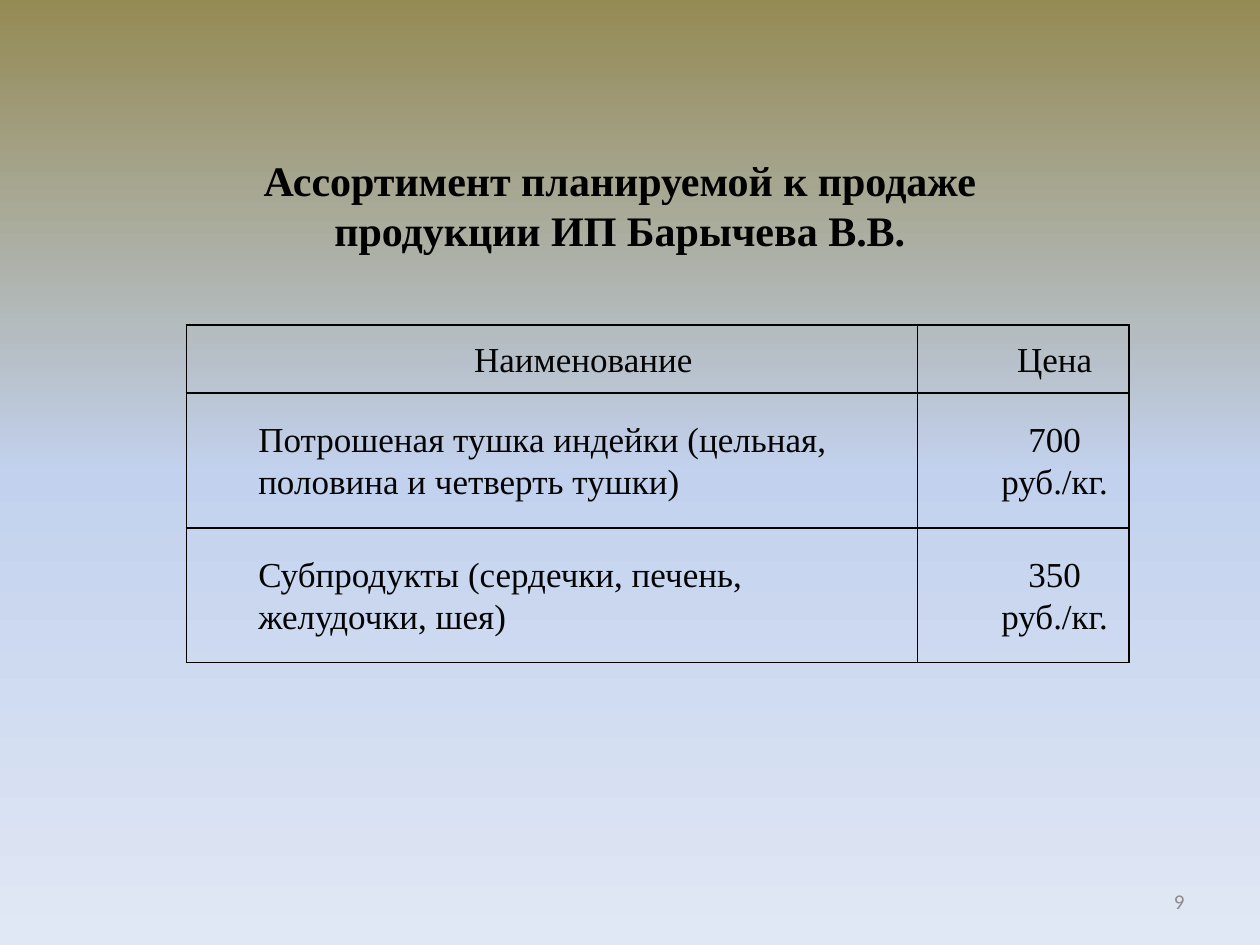
from dataclasses import dataclass
from pptx import Presentation as Deck
from pptx.dml.color import RGBColor as Rgb
from pptx.enum.text import MSO_ANCHOR as Anchor, PP_ALIGN as Align
from pptx.oxml.ns import qn
from pptx.util import Inches, Pt
from lxml.etree import SubElement as Sub


@dataclass(frozen=True)
class Theme:
    serif: str = "Times New Roman"
    sans: str = "Calibri"
    black: str = "000000"
    ink: str = "040404"
    gray: str = "8C8C8C"
    back: tuple = ((0, "948A54"), (50, "C2D1ED"), (100, "E1E8F5"))
    title: int = 24
    body: int = 20
    small: int = 12
    rule: int = 1


class Page:
    def __init__(self, deck, theme):
        self.theme = theme
        self.slide = deck.slides.add_slide(deck.slide_layouts[6])

    def style(self, para, size, font, color, align, bold=False):
        para.alignment = align
        para.font.size = Pt(size)
        para.font.name = font
        para.font.bold = bold
        para.font.color.rgb = Rgb.from_string(color)

    def fade(self):
        fill = self.slide.background.fill
        fill.gradient()
        fill.gradient_angle = 270
        stops = next(self.slide.element.iter(qn("a:gsLst")))
        for stop in list(stops):
            stops.remove(stop)
        for spot, color in self.theme.back:
            stop = Sub(stops, qn("a:gs"), pos=str(spot * 1000))
            Sub(stop, qn("a:srgbClr"), val=color)

    def text(self, box, words, *look, **more):
        frame = self.slide.shapes.add_textbox(*map(Inches, box)).text_frame
        frame.word_wrap = True
        frame.vertical_anchor = Anchor.MIDDLE
        para = frame.paragraphs[0]
        para.text = words
        self.style(para, *look, **more)

    def border(self, cell):
        props = cell._tc.get_or_add_tcPr()
        for side in ("lnL", "lnR", "lnT", "lnB"):
            line = Sub(props, qn(f"a:{side}"), w=str(Pt(self.theme.rule)))
            fill = Sub(line, qn("a:solidFill"))
            Sub(fill, qn("a:srgbClr"), val=self.theme.black)

    def cell(self, cell, words, align):
        self.border(cell)
        cell.fill.background()
        cell.vertical_anchor = Anchor.MIDDLE
        cell.margin_left = cell.margin_right = Inches(0.07)
        cell.margin_top = cell.margin_bottom = 0
        para = cell.text_frame.paragraphs[0]
        para.text = words
        para.line_spacing = 1.07
        props = para._p.get_or_add_pPr()
        props.set("marL", str(Inches(0.5)))
        props.set("indent", "0")
        theme = self.theme
        self.style(para, theme.body, theme.serif, theme.ink, align)

    def table(self, left, top, wides, highs, data):
        size = map(Inches, (left, top, sum(wides), sum(highs)))
        grid = self.slide.shapes.add_table(len(highs), len(wides), *size).table
        grid.first_row = grid.horz_banding = False
        for col, wide in zip(grid.columns, wides):
            col.width = Inches(wide)
        for row, high in zip(grid.rows, highs):
            row.height = Inches(high)
        for r, items in enumerate(data):
            for c, words in enumerate(items):
                align = Align.LEFT if r and not c else Align.CENTER
                self.cell(grid.cell(r, c), words, align)


def main():
    deck = Deck()
    deck.slide_width, deck.slide_height = Inches(10), Inches(7.5)
    theme = Theme()
    page = Page(deck, theme)
    page.fade()
    page.text((7.17, 6.95, 2.33, 0.4), "9",
              theme.small, theme.sans, theme.gray, Align.RIGHT)
    page.table(1.48, 2.58, (5.8, 1.68), (0.54, 1.07, 1.07), (
        ("Наименование", "Цена"),
        ("Потрошеная тушка индейки (цельная, половина и четверть тушки)",
         "700 руб./кг."),
        ("Субпродукты (сердечки, печень, желудочки, шея)", "350 руб./кг."),
    ))
    page.text((1.56, 1.17, 6.72, 0.91),
              "Ассортимент планируемой к продаже продукции ИП Барычева В.В.",
              theme.title, theme.serif, theme.black, Align.CENTER, bold=True)
    deck.save("out.pptx")


if __name__ == "__main__":
    main()
